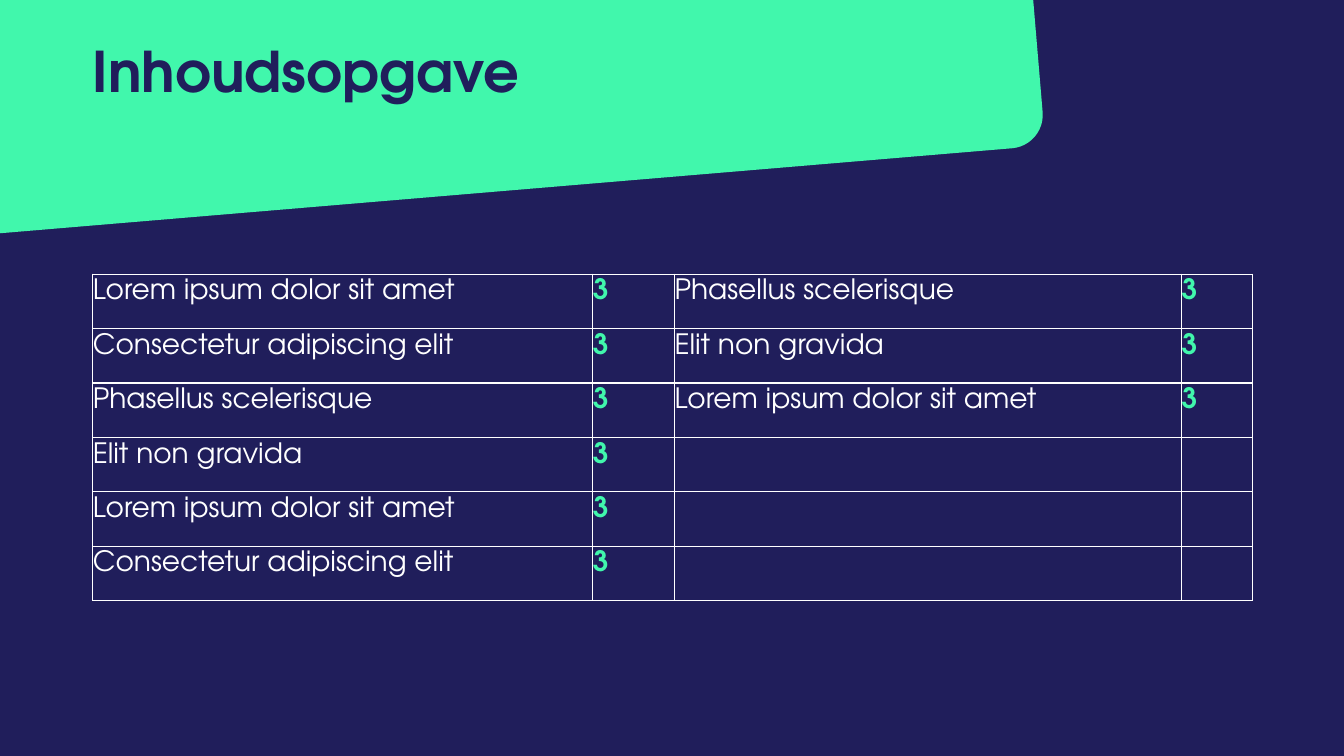
"""Build the table-of-contents slide."""
from typing import NamedTuple

from pptx import Presentation
from pptx.dml.color import RGBColor
from pptx.enum.shapes import MSO_SHAPE
from pptx.enum.text import MSO_ANCHOR
from pptx.slide import Slide
from pptx.table import Table
from pptx.text.text import TextFrame
from pptx.util import Inches, Pt

ROUNDED_RECTANGLE = MSO_SHAPE.ROUNDED_RECTANGLE
ANCHOR_TOP = MSO_ANCHOR.TOP
NAVY = RGBColor(0x20, 0x1E, 0x5B)
MINT = RGBColor(0x41, 0xF7, 0xAC)
WHITE = RGBColor(0xFF, 0xFF, 0xFF)
FONT_NAME = "TeX Gyre Adventor"
MARGIN_LEFT = 0.92
CONTENT_WIDTH = 11.5
ROW_HEIGHT = 0.54
ROWS_PER_COLUMN = 6
COLUMN_WIDTHS = (4.96, 0.81, 5.03, 0.7)


class Entry(NamedTuple):
    title: str
    page: str


TOPICS = (
    "Lorem ipsum dolor sit amet",
    "Consectetur adipiscing elit",
    "Phasellus scelerisque",
    "Elit non gravida",
)
ENTRIES = [
    Entry(TOPICS[index], "3") for index in (0, 1, 2, 3, 0, 1, 2, 3, 0)
]


def write_text(
    text_frame: TextFrame, text: str, size: float, color: RGBColor, bold: bool
) -> None:
    text_frame.text = text
    font = text_frame.paragraphs[0].runs[0].font
    font.name = FONT_NAME
    font.size = Pt(size)
    font.bold = bold
    font.color.rgb = color


def add_banner(slide: Slide) -> None:
    banner = slide.shapes.add_shape(
        ROUNDED_RECTANGLE, Inches(-1), Inches(-0.92), Inches(11.27), Inches(2.84)
    )
    banner.adjustments[0] = 0.117
    banner.rotation = 355.2
    banner.shadow.inherit = False
    banner.fill.solid()
    banner.fill.fore_color.rgb = MINT
    banner.line.fill.background()


def add_title(slide: Slide) -> None:
    title = slide.shapes.add_textbox(
        Inches(MARGIN_LEFT), Inches(0.36), Inches(CONTENT_WIDTH), Inches(0.79)
    )
    text_frame = title.text_frame
    text_frame.word_wrap = True
    text_frame.vertical_anchor = ANCHOR_TOP
    text_frame.margin_left = text_frame.margin_right = 0
    text_frame.margin_top = text_frame.margin_bottom = 0
    write_text(text_frame, "Inhoudsopgave", 40, NAVY, True)


def add_contents_table(slide: Slide) -> Table:
    table = slide.shapes.add_table(
        ROWS_PER_COLUMN,
        len(COLUMN_WIDTHS),
        Inches(MARGIN_LEFT),
        Inches(2.72),
        Inches(CONTENT_WIDTH),
        Inches(ROW_HEIGHT * ROWS_PER_COLUMN),
    ).table
    table.first_row = False
    table.horz_banding = False
    for column, width in zip(table.columns, COLUMN_WIDTHS):
        column.width = Inches(width)
    for row in table.rows:
        row.height = Inches(ROW_HEIGHT)
    for cell in table.iter_cells():
        cell.fill.background()
        cell.margin_left = 0
        cell.margin_right = Inches(0.1)
        cell.margin_top = cell.margin_bottom = Inches(0.05)
    return table


def fill_contents(table: Table) -> None:
    for index, entry in enumerate(ENTRIES):
        block, row = divmod(index, ROWS_PER_COLUMN)
        title_cell = table.cell(row, 2 * block)
        page_cell = table.cell(row, 2 * block + 1)
        write_text(title_cell.text_frame, entry.title, 20, WHITE, False)
        write_text(page_cell.text_frame, entry.page, 20, MINT, True)


def main() -> None:
    presentation = Presentation()
    presentation.slide_width = Inches(13.33)
    presentation.slide_height = Inches(7.5)
    slide = presentation.slides.add_slide(presentation.slide_layouts[6])
    slide.background.fill.solid()
    slide.background.fill.fore_color.rgb = NAVY
    add_banner(slide)
    add_title(slide)
    fill_contents(add_contents_table(slide))
    presentation.save("out.pptx")


if __name__ == "__main__":
    main()
